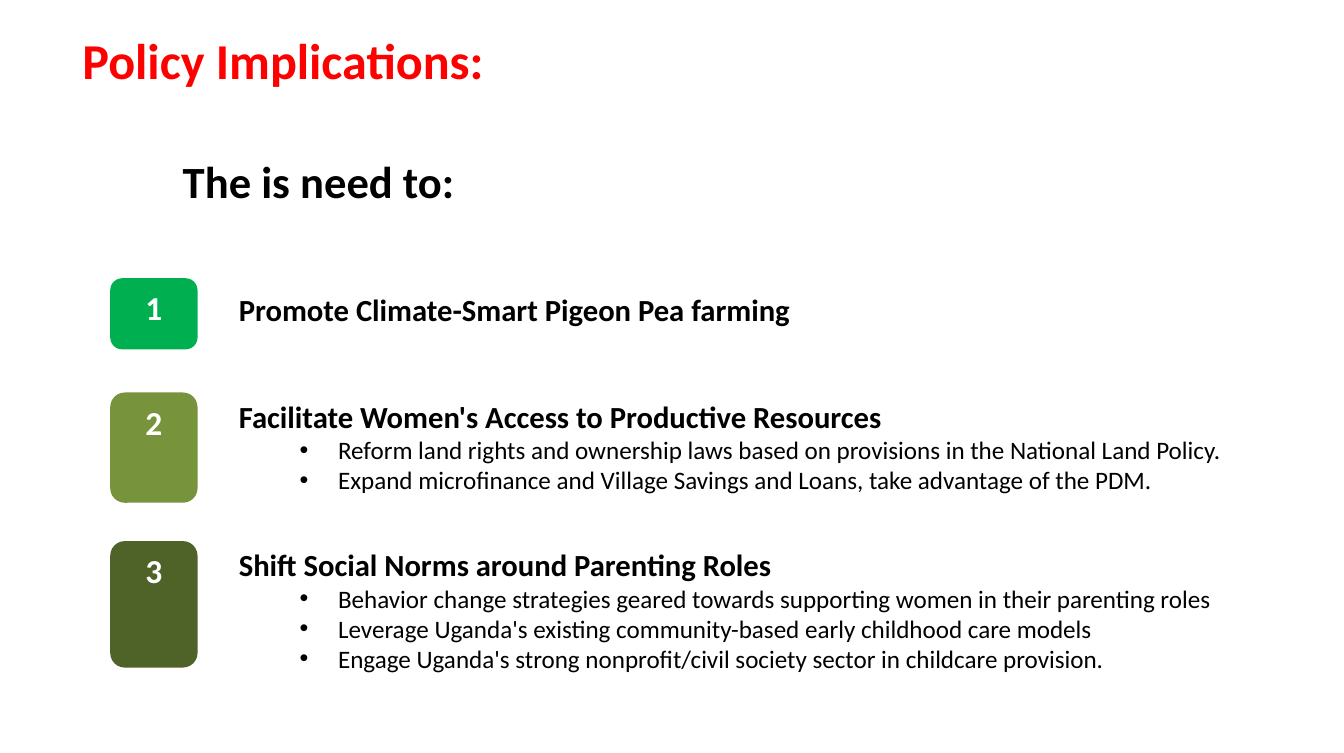
"""Build the policy implications slide with three numbered recommendations."""
import dataclasses

import lxml.etree
import pptx
import pptx.dml.color
import pptx.enum.shapes
import pptx.enum.text
import pptx.oxml.ns
import pptx.util

Cm = pptx.util.Cm
Pt = pptx.util.Pt
ALIGN = pptx.enum.text.PP_ALIGN
ANCHOR = pptx.enum.text.MSO_ANCHOR


@dataclasses.dataclass(frozen=True)
class Theme:
    font: str = "Calibri"
    title: str = "FF0000"
    text: str = "000000"
    badge_text: str = "FFFFFF"
    badges: tuple = ("00B050", "77933C", "4F6228")
    title_size: int = 36
    lead_size: int = 32
    badge_size: int = 24
    heading_size: int = 22
    bullet_size: int = 18


theme = Theme()


def set_paragraph(p, text, size, color, bold, align, before=0):
    p.text = text
    p.alignment = align
    p.space_before = Pt(before)
    p.font.name = theme.font
    p.font.size = Pt(size)
    p.font.bold = bold
    p.font.color.rgb = pptx.dml.color.RGBColor.from_string(color)


def set_indent(p, left, hanging=0, bullet=None):
    pPr = p._p.get_or_add_pPr()
    pPr.set("marL", str(Cm(left)))
    pPr.set("indent", str(-Cm(hanging)))
    tag = "a:buChar" if bullet else "a:buNone"
    bu = lxml.etree.Element(pptx.oxml.ns.qn(tag))
    if bullet:
        bu.set("char", bullet)
    pPr.insert_element_before(bu, "a:tabLst", "a:defRPr", "a:extLst")


recommendations = [
    (7.04, 1.8, 7.24, 24.31, 1.6, "Promote Climate-Smart Pigeon Pea farming", []),
    (9.93, 2.79, 9.93, 25.6, 2.79, "Facilitate Women's Access to Productive Resources", [
        "Reform land rights and ownership laws based on provisions in the National Land Policy.",
        "Expand microfinance and Village Savings and Loans, take advantage of the PDM.",
    ]),
    (13.69, 3.2, 13.69, 25.25, 3.63, "Shift Social Norms around Parenting Roles", [
        "Behavior change strategies geared towards supporting women in their parenting roles",
        "Leverage Uganda's existing community-based early childhood care models",
        "Engage Uganda's strong nonprofit/civil society sector in childcare provision.",
    ]),
]

prs = pptx.Presentation()
prs.slide_width, prs.slide_height = Cm(34.01), Cm(19.05)
s = prs.slides.add_slide(prs.slide_layouts.get_by_name("Comparison"))
title, *bodies, spare = s.placeholders
spare.element.getparent().remove(spare.element)

title.left, title.top, title.width, title.height = Cm(1.83), Cm(0.46), Cm(29.21), Cm(5.08)
tf = title.text_frame
tf.auto_size = pptx.enum.text.MSO_AUTO_SIZE.NONE
tf.vertical_anchor = ANCHOR.MIDDLE
set_paragraph(tf.paragraphs[0], "Policy Implications:", theme.title_size, theme.title, True, ALIGN.LEFT)
lead = tf.add_paragraph()
set_paragraph(lead, "The is need to:", theme.lead_size, theme.text, True, ALIGN.LEFT, 46)
set_indent(lead, 2.54)

for number, (body, color, item) in enumerate(zip(bodies, theme.badges, recommendations), 1):
    badge_top, badge_height, top, width, height, heading, bullets = item

    sp = s.shapes.add_shape(pptx.enum.shapes.MSO_SHAPE.ROUNDED_RECTANGLE,
                            Cm(2.79), Cm(badge_top), Cm(2.21), Cm(badge_height))
    sp.shadow.inherit = False
    sp.fill.solid()
    sp.fill.fore_color.rgb = pptx.dml.color.RGBColor.from_string(color)
    sp.line.fill.background()
    sp.text_frame.vertical_anchor = ANCHOR.TOP
    set_paragraph(sp.text_frame.paragraphs[0], str(number), theme.badge_size,
                  theme.badge_text, True, ALIGN.CENTER)

    body.left, body.top, body.width, body.height = Cm(5.79), Cm(top), Cm(width), Cm(height)
    tf = body.text_frame
    tf.auto_size = pptx.enum.text.MSO_AUTO_SIZE.NONE
    tf.vertical_anchor = ANCHOR.TOP
    p = tf.paragraphs[0]
    set_paragraph(p, heading, theme.heading_size, theme.text, True, ALIGN.JUSTIFY, 6)
    set_indent(p, 0)
    for bullet in bullets:
        p = tf.add_paragraph()
        set_paragraph(p, bullet, theme.bullet_size, theme.text, False, ALIGN.JUSTIFY)
        set_indent(p, 2.51, 0.97, "•")

prs.save("out.pptx")
